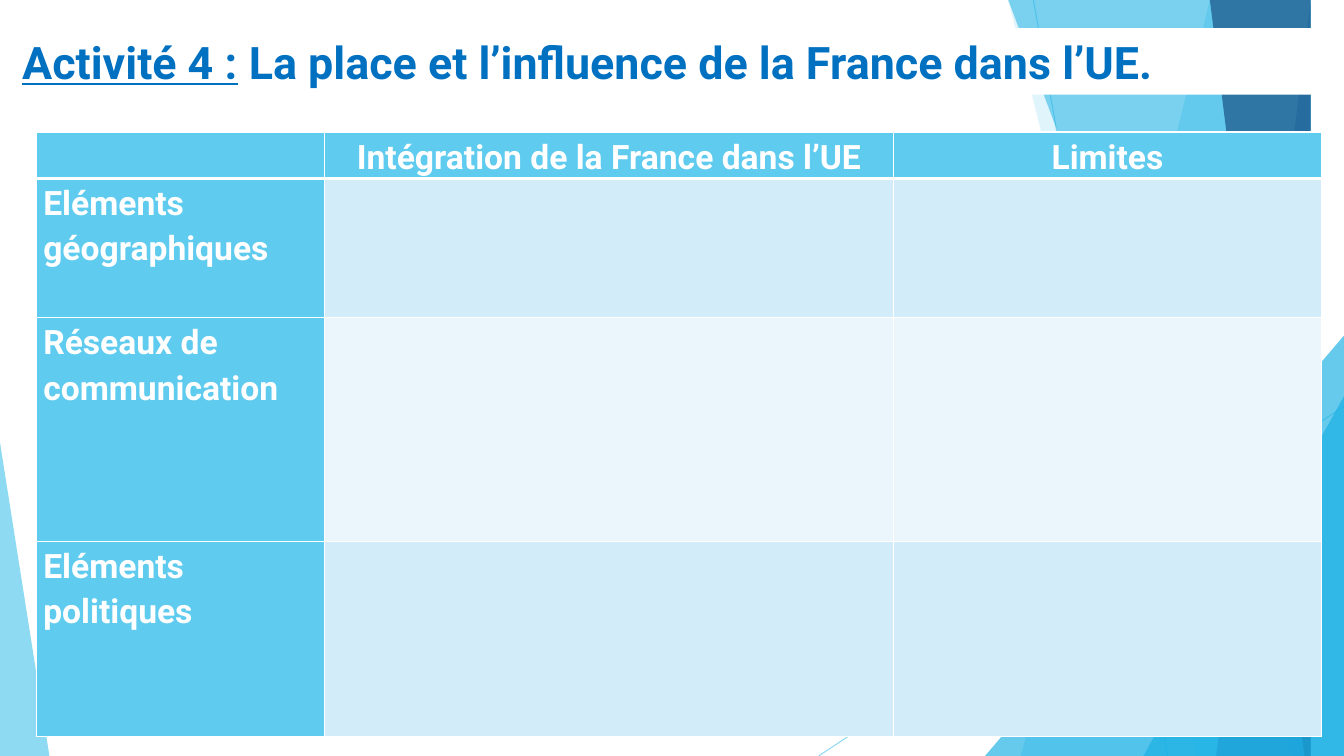
from lxml.etree import SubElement
from pptx import Presentation
from pptx.dml.color import RGBColor
from pptx.enum.shapes import MSO_CONNECTOR, MSO_SHAPE
from pptx.enum.text import MSO_ANCHOR, PP_ALIGN
from pptx.oxml import parse_xml
from pptx.oxml.ns import nsdecls, qn
from pptx.util import Inches, Pt

SKY = RGBColor(0x5F, 0xCB, 0xEF)
CYAN = RGBColor(0x17, 0xB0, 0xE4)
BLUE = RGBColor(0x2E, 0x83, 0xC3)
NAVY = RGBColor(0x22, 0x62, 0x92)
INK = RGBColor(0x00, 0x70, 0xC0)
PALE = RGBColor(0xD2, 0xEC, 0xF9)
MIST = RGBColor(0xEA, 0xF6, 0xFC)
WHITE = RGBColor(0xFF, 0xFF, 0xFF)
FONT = "Roboto"
W, H = 13.33, 7.5

deck = Presentation()
deck.slide_width, deck.slide_height = Inches(W), Inches(H)
slide = deck.slides.add_slide(deck.slide_layouts[5])
shapes = slide.shapes


def fade(shape, share):
    """Set the opacity, in percent, of the shape's only colour."""
    color = shape._element.spPr.find(".//" + qn("a:srgbClr"))
    SubElement(color, qn("a:alpha"), val=str(share * 1000))


def paint(shape, color, share):
    shape.shadow.inherit = False
    shape.fill.solid()
    shape.fill.fore_color.rgb = color
    shape.line.fill.background()
    fade(shape, share)


# Thin rays behind the facets
for x1, y1, x2 in [(10.25, 0, 11.58), (W, 4.03, 8.12)]:
    ray = shapes.add_connector(MSO_CONNECTOR.STRAIGHT, Inches(x1), Inches(y1),
                               Inches(x2), Inches(H))
    ray.line.color.rgb = SKY
    ray.line.width = Pt(0.75)
    fade(ray, 70)
    SubElement(ray._element.spPr, qn("a:effectLst"))

# Bands run from a top x to a bottom x and fill to the right edge;
# wedges have a left, top, width and apex and stand on the bottom edge
facets = [
    ("band", (12.28, 10.04), SKY, 36),
    ("band", (10.5, 11.83), SKY, 20),
    ("wedge", (9.77, 3.33, 3.56, 1), CYAN, 66),
    ("band", (10.21, 12.91), CYAN, 50),
    ("band", (13.03, 11.92), BLUE, 70),
    ("band", (11.96, 13.18), NAVY, 80),
    ("wedge", (11.34, 3.93, 1.99, 1), CYAN, 66),
    ("wedge", (0, 4.39, 0.49, 0), SKY, 70),
]
for kind, spot, color, share in facets:
    if kind == "band":
        top, foot = spot
        pen = shapes.build_freeform(top, 0, scale=Inches(1))
        pen.add_line_segments([(W, 0), (W, H), (foot, H)], close=True)
        facet = pen.convert_to_shape()
    else:
        x, y, wide, apex = spot
        facet = shapes.add_shape(MSO_SHAPE.ISOSCELES_TRIANGLE, Inches(x),
                                 Inches(y), Inches(wide), Inches(H - y))
        facet.adjustments[0] = apex
    paint(facet, color, share)

# Table
cols = [2.86, 5.64, 4.25]
rows = [0.46, 1.38, 2.22, 1.94]
texts = [
    ["", "Intégration de la France dans l’UE", "Limites"],
    ["Eléments géographiques", "", ""],
    ["Réseaux de communication", "", ""],
    ["Eléments politiques", "", ""],
]
table = shapes.add_table(len(rows), len(cols), Inches(0.36), Inches(1.31),
                         Inches(sum(cols)), Inches(sum(rows))).table
for col, wide in zip(table.columns, cols):
    col.width = Inches(wide)
for r, tall in enumerate(rows):
    table.rows[r].height = Inches(tall)
    for c, text in enumerate(texts[r]):
        cell = table.cell(r, c)
        cell.margin_left = cell.margin_right = Inches(0.07)
        cell.margin_top = cell.margin_bottom = 0
        cell.fill.solid()
        head = r == 0 or c == 0
        cell.fill.fore_color.rgb = SKY if head else PALE if r % 2 else MIST
        para = cell.text_frame.paragraphs[0]
        para.text = text
        para.line_spacing = 1.15
        para.alignment = PP_ALIGN.LEFT if r else PP_ALIGN.CENTER
        para.font.name, para.font.size, para.font.bold = FONT, Pt(24), True
        para.font.color.rgb = WHITE
        for i, side in enumerate("LRTB"):
            thick = (r, side) in [(0, "B"), (1, "T")]
            edge = parse_xml(
                f'<a:ln{side} {nsdecls("a")} w="{Pt(3 if thick else 1)}">'
                f'<a:solidFill><a:srgbClr val="{WHITE}"/></a:solidFill>'
                f'</a:ln{side}>')
            cell._tc.get_or_add_tcPr().insert(i, edge)

# Title, brought to the front
title = shapes.title
shapes._spTree.append(title._element)
title.left, title.top = Inches(0.12), Inches(0.28)
title.width, title.height = Inches(12.99), Inches(0.66)
title.fill.solid()
title.fill.fore_color.rgb = WHITE
frame = title.text_frame
frame.word_wrap = True
frame.vertical_anchor = MSO_ANCHOR.MIDDLE
para = frame.paragraphs[0]
para.alignment = PP_ALIGN.LEFT
para.font.name, para.font.size, para.font.bold = FONT, Pt(32), True
para.font.color.rgb = INK
for text, under in [("Activité 4 :", True),
                    (" La place et l’influence de la France dans l’UE.", False)]:
    run = para.add_run()
    run.text = text
    run.font.underline = under

deck.save("out.pptx")
